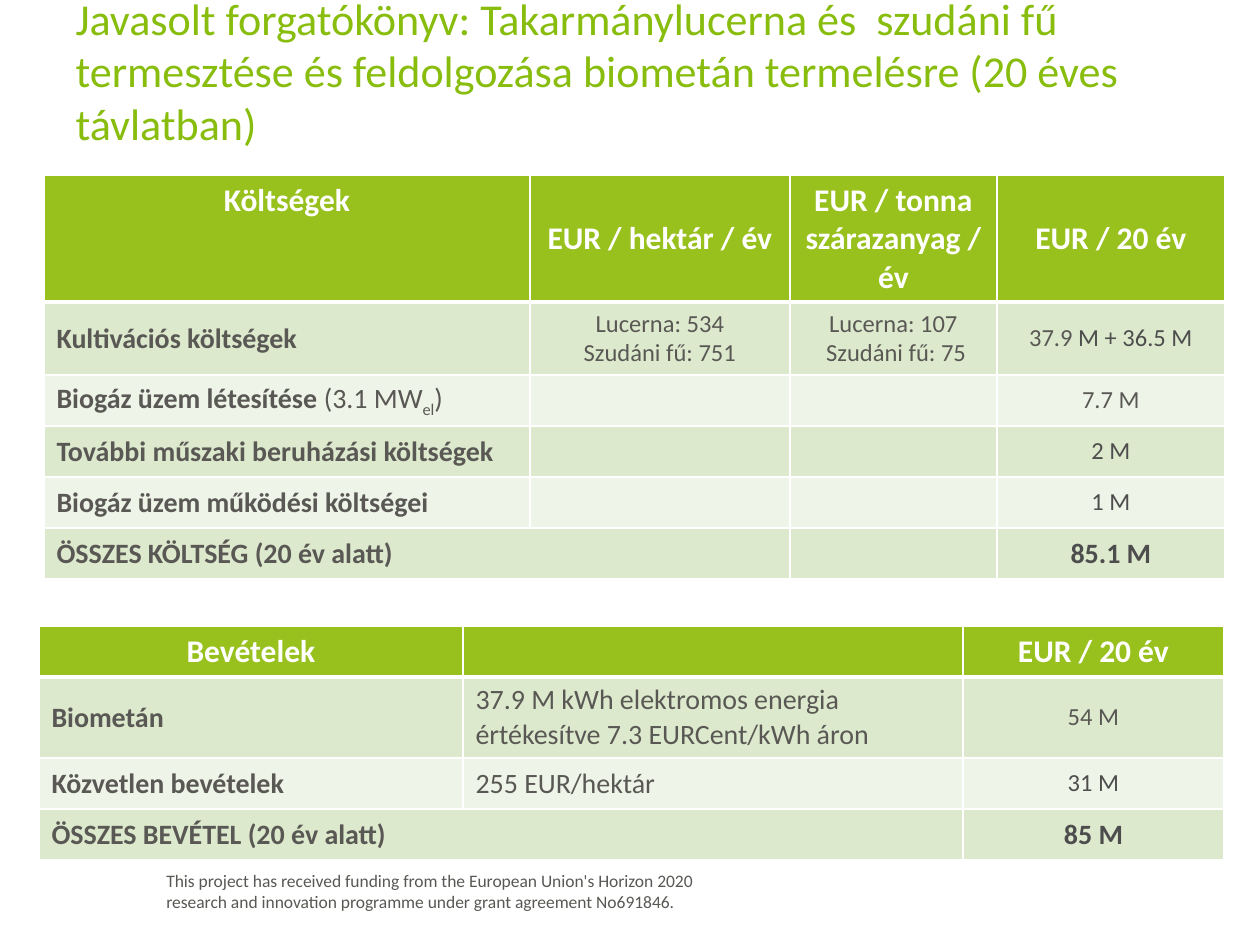
from lxml.etree import SubElement as Sub
from pptx import Presentation
from pptx.dml.color import RGBColor
from pptx.enum.text import MSO_ANCHOR as Anchor, MSO_AUTO_SIZE as Auto, PP_ALIGN as Align
from pptx.oxml.ns import qn
from pptx.util import Emu, Pt

PX = 914400 // 126
GREY, DARK, WHITE = "595854", "4D4D4D", "FFFFFF"
GREEN, BANDS = "98C11E", ("EFF4E8", "DDE9CD")


def write(para, text, size=16, color=GREY, bold=False, align=Align.LEFT, base=0):
    """Append one formatted run; base is a baseline shift in 1/1000 percent."""
    para.alignment = align
    run = para.add_run()
    run.text = text
    font = run.font
    font.name, font.size, font.bold = "Calibri", Pt(size), bold
    font.color.rgb = RGBColor.from_string(color)
    if base:
        font._element.set("baseline", str(base))


def edge(cell, row):
    """Draw white cell borders, with a thick one under the header row."""
    props = cell._tc.get_or_add_tcPr()
    for side in "LRTB":
        thick = (row, side) in ((0, "B"), (1, "T"))
        line = Sub(props, qn(f"a:ln{side}"), w=str(Pt(3 if thick else 1)))
        Sub(Sub(line, qn("a:solidFill")), qn("a:srgbClr"), val=WHITE)


prs = Presentation()
prs.slide_width, prs.slide_height = Emu(1260 * PX), Emu(945 * PX)
slide = prs.slides.add_slide(prs.slide_layouts[5])

title = slide.shapes.title
title.left, title.top, title.width, title.height = [Emu(v * PX) for v in (63, 38, 1134, 157)]
frame = title.text_frame
frame.auto_size, frame.vertical_anchor = Auto.NONE, Anchor.MIDDLE
write(frame.paragraphs[0], "Javasolt forgatókönyv: Takarmánylucerna és  szudáni fű termesztése "
      "és feldolgozása biometán termelésre (20 éves távlatban)", size=25.2, color="88BD0D")
frame.paragraphs[0].add_line_break()

note = slide.shapes.add_textbox(*[Emu(v * PX) for v in (154, 864, 605, 55)])
frame = note.text_frame
frame.word_wrap = True
write(frame.paragraphs[0], "This project has received funding from the European Union's Horizon 2020", size=10)
write(frame.add_paragraph(), "research and innovation programme under grant agreement No691846.", size=10)

# Each table: left, top, column widths, row heights, format of middle columns, rows
income = (39, 626, (424, 500, 261), (51, 81, 51, 51), dict(size=16), [
    ["Bevételek", "", "EUR / 20 év"],
    ["Biometán", "37.9 M kWh elektromos energia értékesítve 7.3 EURCent/kWh áron", "54 M"],
    ["Közvetlen bevételek", "255 EUR/hektár", "31 M"],
    ["ÖSSZES BEVÉTEL (20 év alatt)", "", "85 M"],
])
costs = (44, 175, (486, 260, 207, 228), (127, 73, 51, 51, 51, 51),
         dict(size=14, align=Align.CENTER), [
    ["Költségek", "EUR / hektár / év", "EUR / tonna szárazanyag / év", "EUR / 20 év"],
    ["Kultivációs költségek", "Lucerna: 534\nSzudáni fű: 751",
     "Lucerna: 107\n Szudáni fű: 75", "37.9 "],
    ["Biogáz üzem létesítése ", "", "", "7.7 M"],
    ["További műszaki beruházási költségek", "", "", "2 M"],
    ["Biogáz üzem működési költségei", "", "", "1 M"],
    ["ÖSSZES KÖLTSÉG (20 év alatt)", "", "", "85.1 M"],
])

for left, top, wides, highs, mid, rows in (income, costs):
    box = (left, top, sum(wides), sum(highs))
    table = slide.shapes.add_table(len(rows), len(wides), *[Emu(v * PX) for v in box]).table
    for col, wide in zip(table.columns, wides):
        col.width = Emu(wide * PX)
    for row, high in zip(table.rows, highs):
        row.height = Emu(high * PX)
    last, end = len(rows) - 1, len(wides) - 1
    for r, texts in enumerate(rows):
        for c, text in enumerate(texts):
            cell = table.cell(r, c)
            edge(cell, r)
            cell.fill.solid()
            cell.fill.fore_color.rgb = RGBColor.from_string(BANDS[r % 2] if r else GREEN)
            cell.vertical_anchor = Anchor.MIDDLE
            if r == 0:
                look = dict(size=18, color=WHITE, bold=True, align=Align.CENTER)
                if c in (0, 2) and c != end:
                    cell.vertical_anchor = Anchor.TOP
            elif c == 0:
                look = dict(bold=True)
            elif c < end:
                look = mid
            else:
                grey = text in ("54 M", "37.9 ", "7.7 M")
                look = dict(size=16 if r == last else 14, color=GREY if grey else DARK,
                            bold=r == last, align=Align.CENTER)
            for i, part in enumerate(text.split("\n") if text else []):
                frame = cell.text_frame
                write(frame.add_paragraph() if i else frame.paragraphs[0], part, **look)
    table.cell(last, 0).merge(table.cell(last, 1))

# Cells of the cost table with mixed formats
write(table.cell(1, 3).text_frame.paragraphs[0], "M + 36.5 M", size=14, color=DARK, align=Align.CENTER)
plant = table.cell(2, 0).text_frame.paragraphs[0]
for text, base in (("(3.1 MW", 0), ("el", -25000), (")", 0)):
    write(plant, text, base=base)

prs.save("out.pptx")
